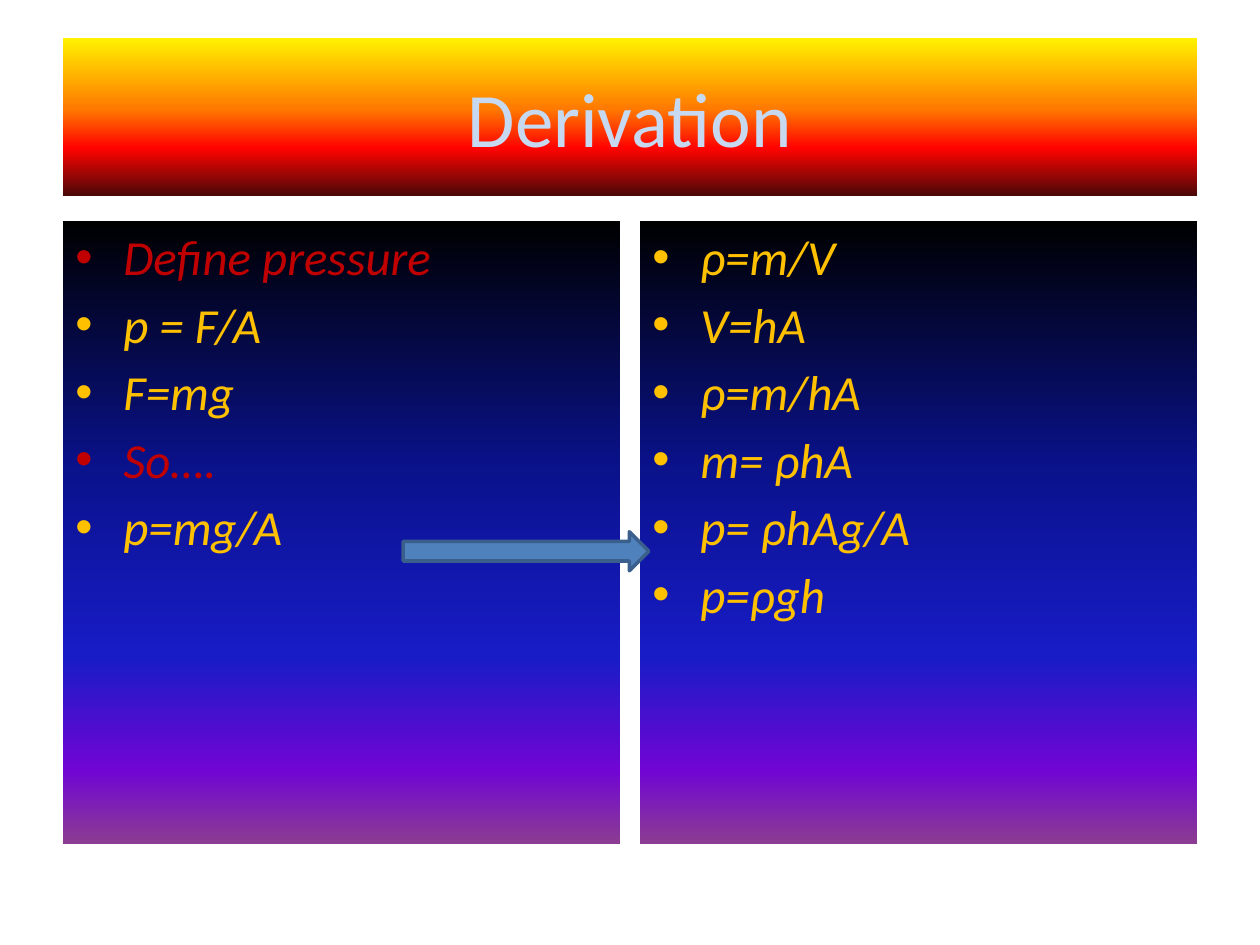
from lxml.etree import SubElement
from pptx import Presentation
from pptx.dml.color import RGBColor
from pptx.enum.shapes import MSO_SHAPE
from pptx.enum.text import MSO_ANCHOR, PP_ALIGN
from pptx.oxml.ns import qn
from pptx.util import Inches, Pt

PALE_BLUE = RGBColor(0xC6, 0xD9, 0xF1)
RED = RGBColor(0xC0, 0x00, 0x00)
GOLD = RGBColor(0xFF, 0xC0, 0x00)
ARROW_FILL = RGBColor(0x4F, 0x81, 0xBD)
ARROW_LINE = RGBColor(0x3A, 0x5F, 0x8C)
FIRE = [(0, "FFF200"), (45, "FF7A00"), (70, "FF0300"), (100, "4D0808")]
NIGHT = [(0, "000000"), (40, "0A128C"), (70, "181CC7"), (88, "7005D4"), (100, "8C3D91")]


def fill_downwards(shape, stops):
    shape.fill.gradient()
    shape.fill.gradient_angle = 270
    stop_list = shape._element.spPr.find(".//" + qn("a:gsLst"))
    for old_stop in list(stop_list):
        stop_list.remove(old_stop)
    for percent, color in stops:
        stop = SubElement(stop_list, qn("a:gs"), pos=str(percent * 1000))
        SubElement(stop, qn("a:srgbClr"), val=color)


def add_run(paragraph, text, size, color, italic=False):
    run = paragraph.add_run()
    run.text = text
    run.font.name = "Calibri"
    run.font.size = Pt(size)
    run.font.italic = italic
    run.font.color.rgb = color


presentation = Presentation()
presentation.slide_width = Inches(10)
presentation.slide_height = Inches(7.5)
slide = presentation.slides.add_slide(presentation.slide_layouts[5])

title = slide.shapes.title
title.left, title.top = Inches(0.5), Inches(0.3)
title.width, title.height = Inches(9), Inches(1.25)
fill_downwards(title, FIRE)
title.text_frame.vertical_anchor = MSO_ANCHOR.MIDDLE
title_paragraph = title.text_frame.paragraphs[0]
title_paragraph.alignment = PP_ALIGN.CENTER
add_run(title_paragraph, "Derivation", 44, PALE_BLUE)

columns = [
    (0.5, [("Define pressure", RED), ("p = F/A", GOLD), ("F=mg", GOLD),
           ("So….", RED), ("p=mg/A", GOLD)]),
    (5.08, [("ρ=m/V", GOLD), ("V=hA", GOLD), ("ρ=m/hA", GOLD),
            ("m= ρhA", GOLD), ("p= ρhAg/A", GOLD), ("p=ρgh", GOLD)]),
]
for left, steps in columns:
    panel = slide.shapes.add_textbox(Inches(left), Inches(1.75), Inches(4.42), Inches(4.95))
    fill_downwards(panel, NIGHT)
    frame = panel.text_frame
    frame.word_wrap = True
    for index, (text, color) in enumerate(steps):
        paragraph = frame.add_paragraph() if index else frame.paragraphs[0]
        paragraph.space_before = Pt(5 if index else 0)
        properties = paragraph._p.get_or_add_pPr()
        properties.set("marL", str(Inches(0.38)))
        properties.set("indent", str(-Inches(0.38)))
        SubElement(properties, qn("a:buFont"), typeface="Arial")
        SubElement(properties, qn("a:buChar"), char="•")
        add_run(paragraph, text, 28, color, italic=True)

arrow = slide.shapes.add_shape(
    MSO_SHAPE.RIGHT_ARROW, Inches(3.2), Inches(4.22), Inches(1.95), Inches(0.31))
arrow.shadow.inherit = False
arrow.fill.solid()
arrow.fill.fore_color.rgb = ARROW_FILL
arrow.line.color.rgb = ARROW_LINE
arrow.line.width = Pt(2)

presentation.save("out.pptx")
